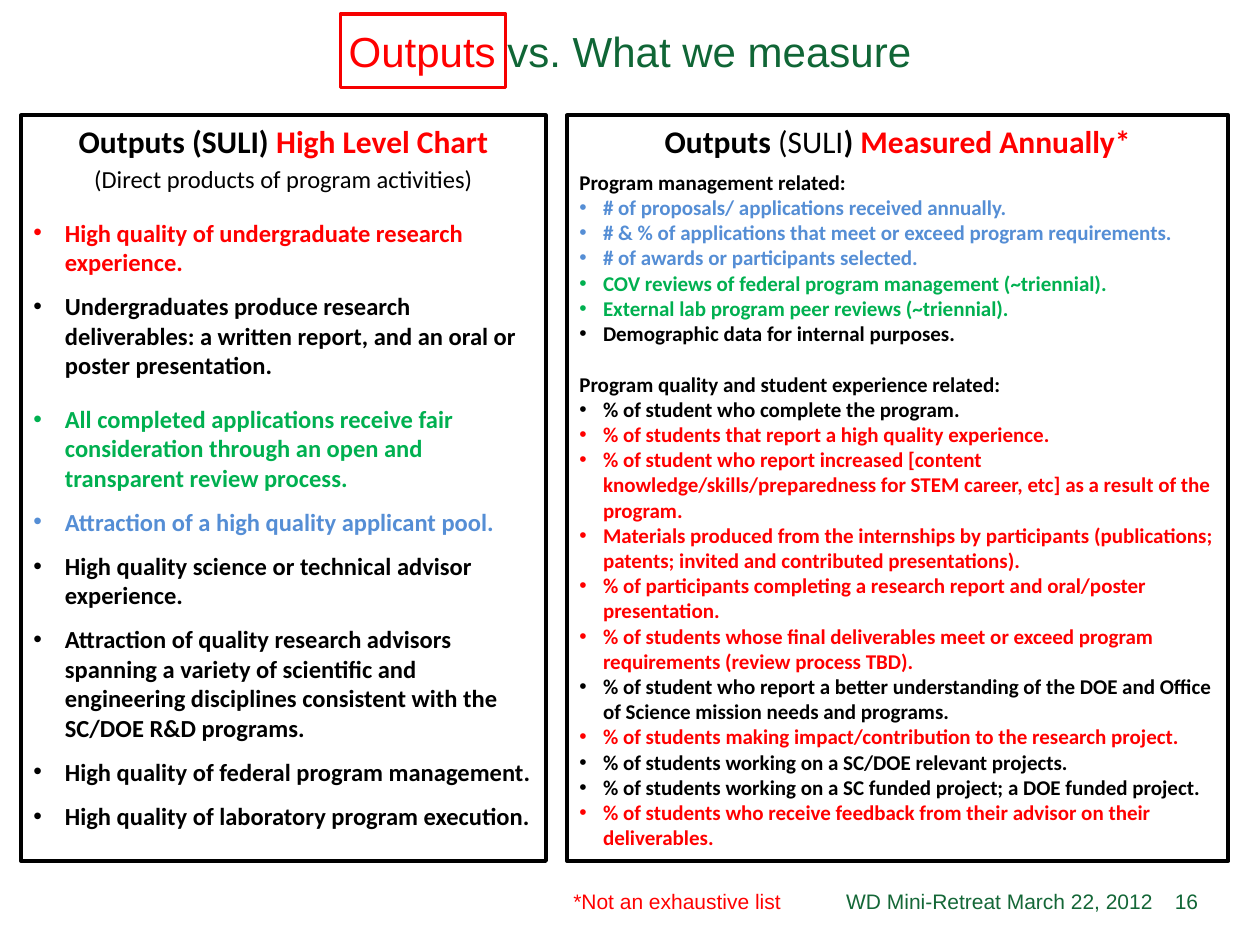
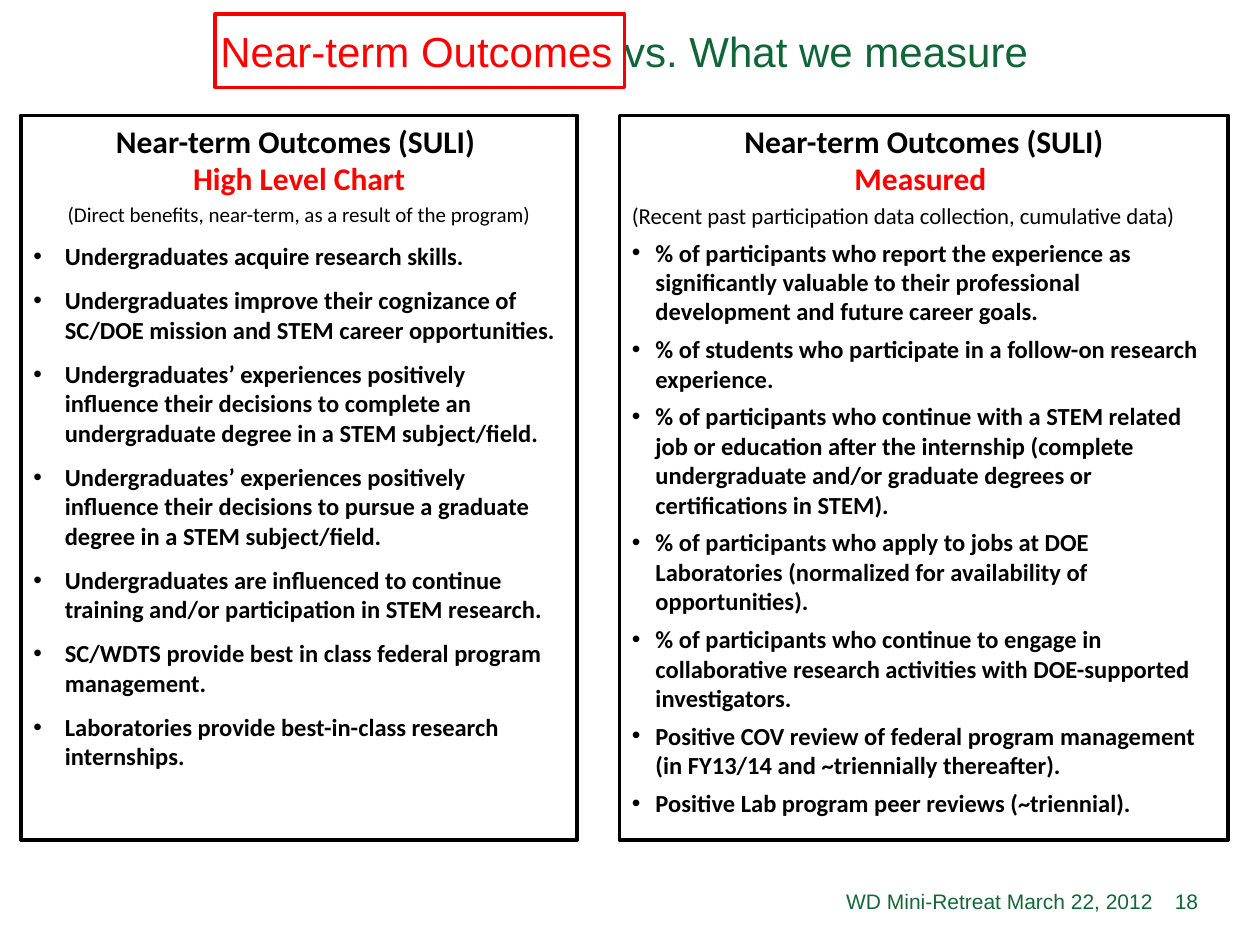
from lxml import etree
from pptx import Presentation
from pptx.dml.color import RGBColor
from pptx.enum import shapes, text
from pptx.oxml.ns import qn
from pptx.util import Pt

RED = RGBColor(0xFF, 0x00, 0x00)
FRAME = RGBColor(0xF6, 0x00, 0x00)
GREEN = RGBColor(0x00, 0xB0, 0x50)
BLUE = RGBColor(0x55, 0x8E, 0xD5)
BLACK = RGBColor(0x00, 0x00, 0x00)
TITLE = RGBColor(0x10, 0x66, 0x36)
FOOT = RGBColor(0x14, 0x67, 0x37)
LEFT, MID, RIGHT = text.PP_ALIGN.LEFT, text.PP_ALIGN.CENTER, text.PP_ALIGN.RIGHT

# Heads: (size, space before, alignment, [(text, colour, bold)])
# Items: (space before, colour, text); a text ending in ":" has no bullet
# Panels: (left, width, item size, indent, heads, items)
outputs = (12, 300, 14, 18, [
    (18, 0, MID, [("Outputs (SULI) ", BLACK, True), ("High Level Chart", RED, True)]),
    (14, 2.8, MID, [("(Direct products of program activities)", BLACK, False)]),
], [
    (13.6, RED, "High quality of undergraduate research experience."),
    (8.4, BLACK, "Undergraduates produce research deliverables: a written report, "
                 "and an oral or poster presentation."),
    (14, GREEN, "All completed applications receive fair consideration through an "
                "open and transparent review process."),
    (8.4, BLUE, "Attraction of a high quality applicant pool."),
    (8.4, BLACK, "High quality science or technical advisor experience."),
    (8.4, BLACK, "Attraction of quality research advisors spanning a variety of scientific "
                 "and engineering disciplines consistent with the SC/DOE R&D programs."),
    (8.4, BLACK, "High quality of federal program management."),
    (8.4, BLACK, "High quality of laboratory program execution."),
])
annual = (324, 378, 12, 13.5, [
    (18, 0, MID, [("Outputs", BLACK, True), (" (SULI", BLACK, False),
                  (") ", BLACK, True), ("Measured Annually*", RED, True)]),
], [
    (5.7, BLACK, "Program management related:"),
    (0, BLUE, "# of proposals/ applications received annually."),
    (0, BLUE, "# & % of applications that meet or exceed program requirements."),
    (0, BLUE, "# of awards or participants selected."),
    (0, GREEN, "COV reviews of federal program management (~triennial)."),
    (0, GREEN, "External lab program peer reviews (~triennial)."),
    (0, BLACK, "Demographic data for internal purposes."),
    (14.5, BLACK, "Program quality and student experience related:"),
    (0, BLACK, "% of student who complete the program."),
    (0, RED, "% of students that report a high quality experience."),
    (0, RED, "% of student who report increased [content knowledge/skills/preparedness "
             "for STEM career, etc] as a result of the program."),
    (0, RED, "Materials produced from the internships by participants (publications; "
             "patents; invited and contributed presentations)."),
    (0, RED, "% of participants completing a research report and oral/poster presentation."),
    (0, RED, "% of students whose final deliverables meet or exceed program requirements "
             "(review process TBD)."),
    (0, BLACK, "% of student who report a better understanding of the DOE and Office of "
               "Science mission needs and programs."),
    (0, RED, "% of students making impact/contribution to the research project."),
    (0, BLACK, "% of students working on a SC/DOE relevant projects."),
    (0, BLACK, "% of students working on a SC funded project; a DOE funded project."),
    (0, RED, "% of students who receive feedback from their advisor on their deliverables."),
])
near = (12, 318, 14, 18, [
    (18, 0, MID, [("Near-term Outcomes (SULI) ", BLACK, True)]),
    (18, 0, MID, [("High Level Chart", RED, True)]),
    (12, 2.4, MID, [("(Direct benefits, near-term, as a result of the program)", BLACK, False)]),
], [(8.4, BLACK, words) for words in (
    "Undergraduates acquire research skills.",
    "Undergraduates improve their cognizance of SC/DOE mission and STEM career opportunities.",
    "Undergraduates’ experiences positively influence their decisions to complete an "
    "undergraduate degree in a STEM subject/field.",
    "Undergraduates’ experiences positively influence their decisions to pursue a "
    "graduate degree in a STEM subject/field.",
    "Undergraduates are influenced to continue training and/or participation in STEM research.",
    "SC/WDTS provide best in class federal program management.",
    "Laboratories provide best-in-class research internships.",
)])
recent = (354, 348, 14, 13.5, [
    (18, 0, MID, [("Near-term Outcomes (SULI)", BLACK, True)]),
    (18, 0, MID, [("Measured ", RED, True)]),
    (13, 2.6, LEFT, [("(Recent past participation data collection, cumulative data)",
                      BLACK, False)]),
], [(4.8, BLACK, words) for words in (
    "% of participants who report the experience as significantly valuable to their "
    "professional development and future career goals.",
    "% of students who participate in a follow-on research experience.",
    "% of participants who continue with a STEM related job or education after the internship "
    "(complete undergraduate and/or graduate degrees or certifications in STEM).",
    "% of participants who apply to jobs at DOE Laboratories (normalized for availability of "
    "opportunities).",
    "% of participants who continue to engage in collaborative research activities with "
    "DOE-supported investigators.",
    "Positive COV review of federal program management (in FY13/14 and ~triennially thereafter).",
    "Positive Lab program peer reviews (~triennial).",
)])

# Slides: (title runs, title frame left and width, note, number, panel height, panels)
pages = [
    ([("Outputs", RED, False), (" vs. What we measure", TITLE, False)],
     194.5, 94.5, "*Not an exhaustive list", "16", 426, (annual, outputs)),
    ([("Near-term Outcomes ", RED, False), ("vs. What we measure ", TITLE, False)],
     123, 234, "", "18", 414, (near, recent)),
]


def write(par, runs, size, font, align):
    par.alignment = align
    for words, tone, bold in runs:
        run = par.add_run()
        run.text = words
        run.font.name, run.font.size, run.font.bold = font, Pt(size), bold
        run.font.color.rgb = tone


def frame(slide, left, top, width, height, tone, weight):
    box = slide.shapes.add_shape(shapes.MSO_SHAPE.RECTANGLE,
                                 Pt(left), Pt(top), Pt(width), Pt(height))
    box.shadow.inherit = False
    box.fill.background()
    box.line.color.rgb = tone
    box.line.width = Pt(weight)
    return box.text_frame


deck = Presentation()
deck.slide_width, deck.slide_height = Pt(720), Pt(540)

for title, start, span, note, number, height, panels in pages:
    slide = deck.slides.add_slide(deck.slide_layouts[6])

    # Title, footer and page number
    labels = [
        (18, 3.6, 684, 54, title, 24, MID),
        (420, 500.4, 246, 28.8, [("WD Mini-Retreat March 22, 2012", FOOT, False)], 12, RIGHT),
        (660, 500.4, 36, 28.8, [(number, TITLE, False)], 12, MID),
    ]
    if note:
        labels.append((320.5, 500.4, 140, 28.8, [(note, RED, False)], 12, LEFT))
    for left, top, width, tall, runs, size, align in labels:
        label = slide.shapes.add_textbox(Pt(left), Pt(top), Pt(width), Pt(tall)).text_frame
        label.word_wrap = True
        label.vertical_anchor = text.MSO_ANCHOR.MIDDLE
        par = label.paragraphs[0]
        write(par, runs, size, "Arial", align)
        if runs is title:
            par.line_spacing = 0.9

    # Two panels: heading lines, then bullets
    for left, width, size, indent, heads, items in panels:
        body = frame(slide, left, 66, width, height, BLACK, 2.25)
        body.word_wrap = True
        body.vertical_anchor = text.MSO_ANCHOR.TOP
        for row, (big, gap, align, runs) in enumerate(heads):
            par = body.add_paragraph() if row else body.paragraphs[0]
            if gap:
                par.space_before = Pt(gap)
            write(par, runs, big, "Calibri", align)
        for gap, tone, words in items:
            par = body.add_paragraph()
            if not words.endswith(":"):
                props = par._p.get_or_add_pPr()
                props.set("marL", str(Pt(indent)))
                props.set("indent", str(-Pt(indent)))
                etree.SubElement(props, qn("a:buFont"), typeface="Arial")
                etree.SubElement(props, qn("a:buChar"), char="•")
            par.space_before = Pt(gap)
            write(par, [(words, tone, True)], size, "Calibri", LEFT)

    # Red frame around the title's first words
    frame(slide, start, 8, span, 42, FRAME, 2)

deck.save("out.pptx")
